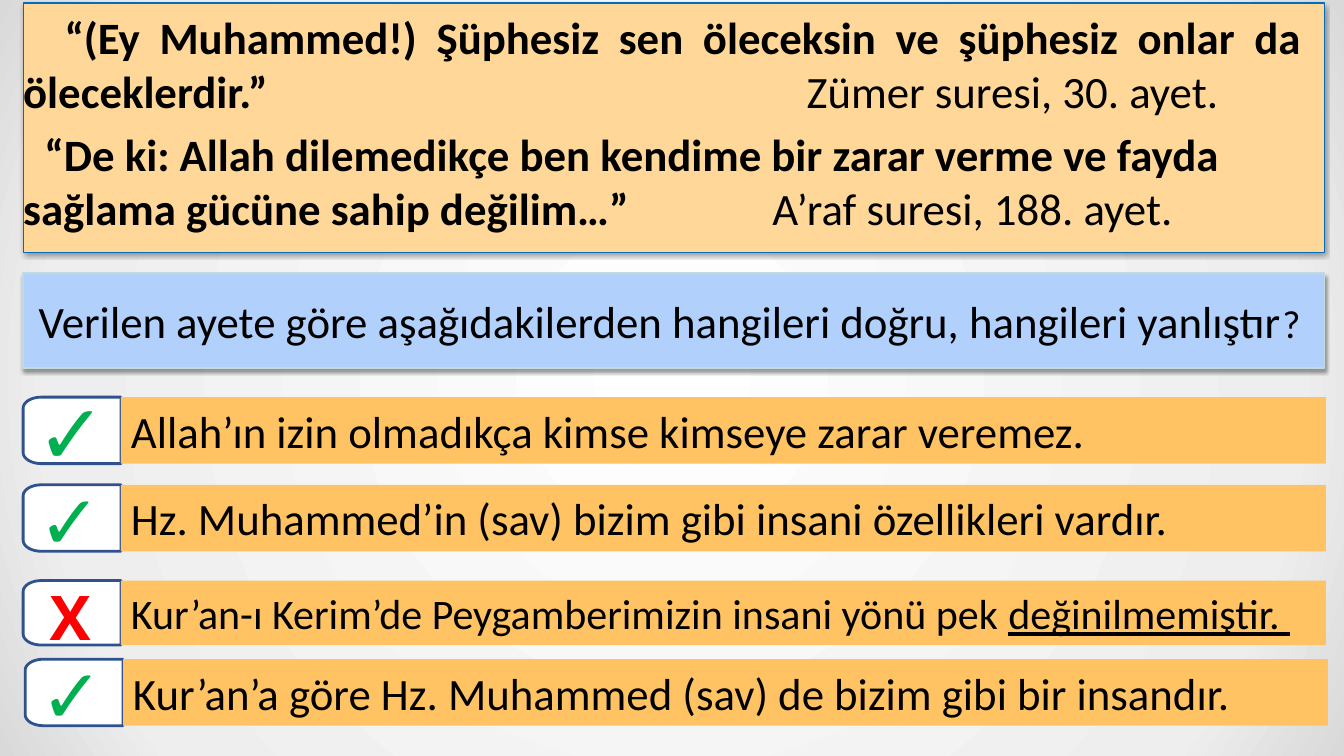
import math
from lxml import etree
from pptx import Presentation
from pptx import util as u
from pptx.dml.color import RGBColor
from pptx.enum import shapes, text
from pptx.oxml import parse_xml
from pptx.oxml.ns import nsdecls, qn


class Theme:
    font, tick_font, cross_font = "Calibri", "TeX Gyre Bonum", "Open Sans"
    black, white, green, red = "000000", "FFFFFF", "00B050", "FF0000"
    verse, verse_line = "FFD798", "006EBC"
    question, question_line = "B2D0FC", "C2DADC"
    bar, box_line = "FFC364", "2F528F"
    backdrop = ((0, "FFFFFF"), (81, "EEEEEE"), (100, "D9D9D9"))
    body, small, smaller = 32, 30, 28


def add_text(p, words, size=Theme.body, color=Theme.black, font=Theme.font,
             bold=False, underline=False):
    r = p.add_run()
    r.text = words
    f = r.font
    f.size, f.name, f.bold = u.Pt(size), font, bold
    f.underline = underline or None
    f.color.rgb = RGBColor.from_string(color)
    return r


class Board:
    def __init__(self, s, theme):
        self.s, self.theme = s, theme

    def background(self):
        stops = "".join(f'<a:gs pos="{pos * 1000}"><a:srgbClr val="{c}"/></a:gs>'
                        for pos, c in self.theme.backdrop)
        bg = parse_xml(
            f'<p:bg {nsdecls("p", "a")}><p:bgPr><a:gradFill rotWithShape="1">'
            f'<a:gsLst>{stops}</a:gsLst><a:path path="circle">'
            '<a:fillToRect l="50000" t="50000" r="50000" b="50000"/></a:path>'
            '</a:gradFill><a:effectLst/></p:bgPr></p:bg>')
        self.s.element.cSld.insert(0, bg)

    def paint(self, sp, fill, line=None, width=1):
        sp.shadow.inherit = False
        sp.fill.solid()
        sp.fill.fore_color.rgb = RGBColor.from_string(fill)
        if line:
            sp.line.color.rgb = RGBColor.from_string(line)
            sp.line.width = u.Pt(width)
        else:
            sp.line.fill.background()

    def frame(self, sp, anchor, align, insets=(0.1, 0.05, 0.1, 0.05)):
        tf = sp.text_frame
        tf.word_wrap, tf.vertical_anchor = True, anchor
        (tf.margin_left, tf.margin_top,
         tf.margin_right, tf.margin_bottom) = map(u.Inches, insets)
        tf.paragraphs[0].alignment = align
        return tf

    def panel(self, x, y, w, h, fill, line=None, width=1, shadow=False):
        sp = self.s.shapes.add_shape(shapes.MSO_SHAPE.RECTANGLE,
                                     *map(u.Inches, (x, y, w, h)))
        self.paint(sp, fill, line, width)
        if shadow:
            effects = sp._element.spPr.find(qn("a:effectLst"))
            shade = etree.SubElement(effects, qn("a:outerShdw"), dir="5400000",
                                     blurRad=str(u.Pt(3.1)), dist=str(u.Pt(1.6)),
                                     rotWithShape="0")
            color = etree.SubElement(shade, qn("a:srgbClr"), val="000000")
            etree.SubElement(color, qn("a:alpha"), val="38000")
        return sp

    def verse(self, p, tabs, quote, source):
        tab_list = etree.SubElement(p._p.get_or_add_pPr(), qn("a:tabLst"))
        for pos in tabs:
            etree.SubElement(tab_list, qn("a:tab"), pos=str(u.Inches(pos)),
                             algn="l")
        add_text(p, "\t" + quote, bold=True)
        add_text(p, "\t" + source)

    def answer_box(self, x, y, w, h, rx=0.18, ry=0.11, steps=8):
        # Left corners are quarter ellipses, right corners are square
        points = [(x + w, y), (x + w, y + h)]
        for cy, start in ((y + h - ry, 90), (y + ry, 180)):
            for i in range(steps + 1):
                a = math.radians(start + 90 * i / steps)
                points.append((x + rx + rx * math.cos(a), cy + ry * math.sin(a)))
        points = [(u.Inches(px), u.Inches(py)) for px, py in points]
        fb = self.s.shapes.build_freeform(*points[0])
        fb.add_line_segments(points[1:], close=True)
        self.paint(fb.convert_to_shape(), self.theme.white, self.theme.box_line, 2)

    def mark(self, x, y, w, h, sign, size, color, font):
        sp = self.s.shapes.add_textbox(*map(u.Inches, (x, y, w, h)))
        tf = self.frame(sp, text.MSO_ANCHOR.TOP, text.PP_ALIGN.CENTER)
        add_text(tf.paragraphs[0], sign, size, color, font, bold=True)

    def statement(self, x, y, h, words, ending="", size=Theme.body):
        self.answer_box(x, y, 0.97, h)
        sp = self.panel(x + 0.97, y, 11.95, h, self.theme.bar)
        tf = self.frame(sp, text.MSO_ANCHOR.MIDDLE, text.PP_ALIGN.LEFT)
        add_text(tf.paragraphs[0], words, size)
        if ending:
            add_text(tf.paragraphs[0], ending, size, underline=True)


def main():
    prs = Presentation()
    prs.slide_width, prs.slide_height = u.Inches(13.33), u.Inches(7.5)
    t = Theme
    board = Board(prs.slides.add_slide(prs.slide_layouts[6]), t)
    board.background()

    # Verses
    sp = board.panel(0.23, 0.03, 12.91, 2.48, t.verse, t.verse_line, 0.75, True)
    tf = board.frame(sp, text.MSO_ANCHOR.TOP, text.PP_ALIGN.JUSTIFY,
                     (0, 0.07, 0.22, 0.07))
    board.verse(tf.paragraphs[0], (0.41, 7.77),
                "“(Ey Muhammed!) Şüphesiz sen öleceksin ve şüphesiz onlar da "
                "öleceklerdir.”", "Zümer suresi, 30. ayet.")
    p = tf.add_paragraph()
    p.alignment, p.space_before = text.PP_ALIGN.LEFT, u.Pt(6.4)
    board.verse(p, (0.21, 7.43),
                "“De ki: Allah dilemedikçe ben kendime bir zarar verme ve fayda "
                "sağlama gücüne sahip değilim…”", "A’raf suresi, 188. ayet.")

    # Question
    sp = board.panel(0.23, 2.71, 12.91, 0.94, t.question, t.question_line,
                     shadow=True)
    tf = board.frame(sp, text.MSO_ANCHOR.MIDDLE, text.PP_ALIGN.CENTER,
                     (0, 0.07, 0, 0.07))
    add_text(tf.paragraphs[0], "Verilen ayete göre aşağıdakilerden hangileri "
             "doğru, hangileri yanlıştır")
    add_text(tf.paragraphs[0], "? ", t.smaller)

    # Statements with their answers
    tick = dict(sign="✓", color=t.green, font=t.tick_font)
    cross = dict(sign="X", color=t.red, font=t.cross_font)
    rows = (
        (dict(x=0.23, y=3.94, h=0.66,
              words="Allah’ın izin olmadıkça kimse kimseye zarar veremez."),
         dict(x=0, y=3.73, w=1.43, h=1.11, size=60, **tick)),
        (dict(x=0.23, y=4.81, h=0.66,
              words="Hz. Muhammed’in (sav) bizim gibi insani özellikleri vardır."),
         dict(x=-0.02, y=4.65, w=1.43, h=1.01, size=54, **tick)),
        (dict(x=0.23, y=5.76, h=0.64, size=t.small, ending="değinilmemiştir. ",
              words="Kur’an-ı Kerim’de Peygamberimizin insani yönü pek "),
         dict(x=0.39, y=5.69, w=0.61, h=0.84, size=44, **cross)),
        (dict(x=0.25, y=6.54, h=0.66,
              words="Kur’an’a göre Hz. Muhammed (sav) de bizim gibi bir insandır."),
         dict(x=0, y=6.38, w=1.43, h=1.01, size=54, **tick)),
    )
    for statement, answer in rows:
        board.statement(**statement)
        board.mark(**answer)

    prs.save("out.pptx")


if __name__ == "__main__":
    main()
